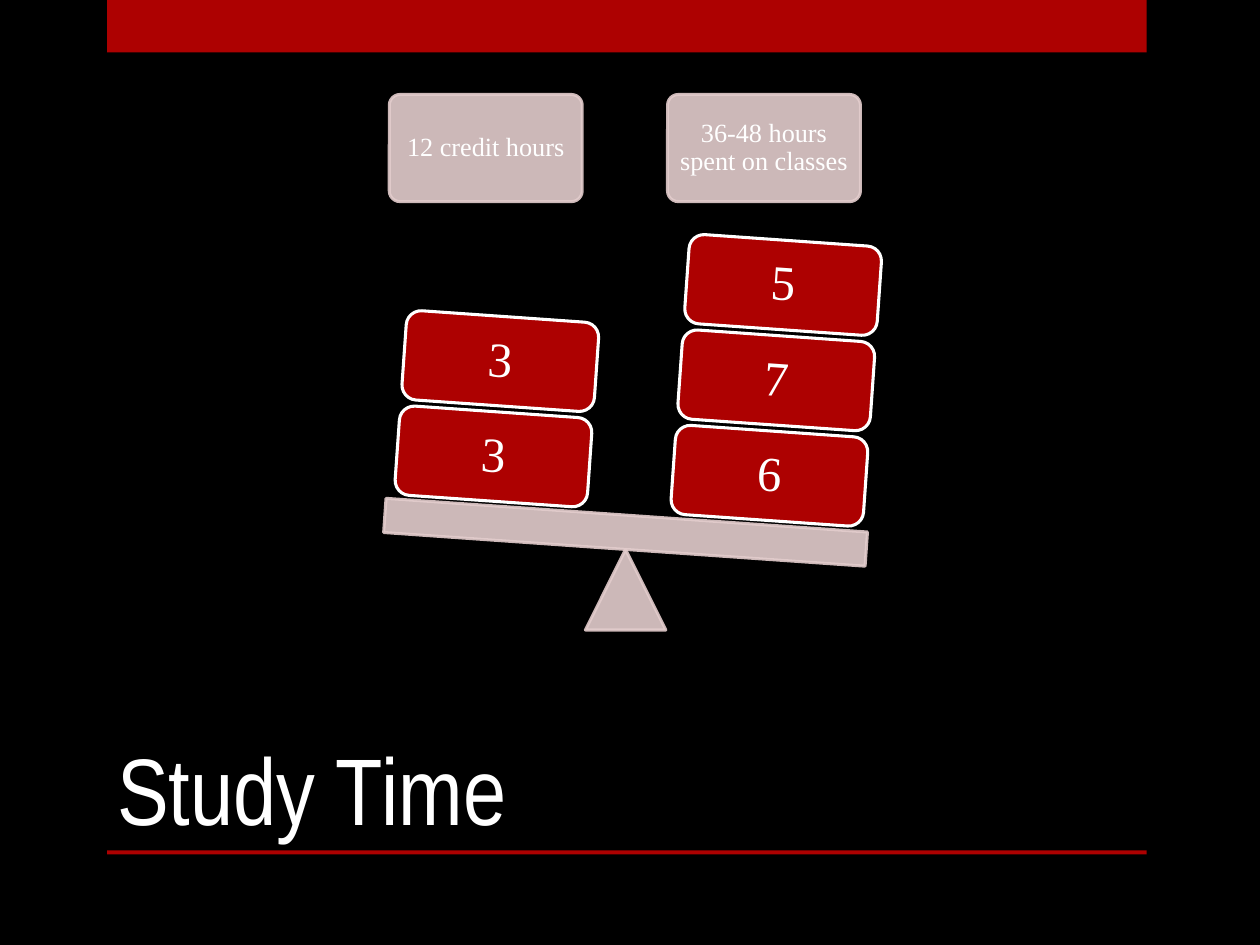
from lxml import etree
from pptx import Presentation
from pptx.dml.color import RGBColor
from pptx.enum.shapes import MSO_SHAPE
from pptx.enum.text import MSO_ANCHOR, PP_ALIGN
from pptx.oxml.ns import qn
from pptx.util import Pt

BLACK = RGBColor(0x00, 0x00, 0x00)
RED = RGBColor(0xAD, 0x01, 0x01)
PINK = RGBColor(0xE3, 0xCC, 0xCC)
WHITE = RGBColor(0xFF, 0xFF, 0xFF)
RECT = MSO_SHAPE.RECTANGLE
ROUNDED = MSO_SHAPE.ROUNDED_RECTANGLE
TRIANGLE = MSO_SHAPE.ISOSCELES_TRIANGLE
MIDDLE, BOTTOM = MSO_ANCHOR.MIDDLE, MSO_ANCHOR.BOTTOM
CENTER, LEFT = PP_ALIGN.CENTER, PP_ALIGN.LEFT
TILT = 4
HEADINGS = ["12 credit hours", "36-48 hours spent on classes"]
STACKS = [["3", "3"], ["6", "7", "5"]]


def set_attrs(obj, values):
    for name, value in values.items():
        setattr(obj, name, value)


def add_shape(s, kind, x, y, w, h, fill, line=None, alpha=None, rotation=0):
    sp = s.shapes.add_shape(kind, Pt(x), Pt(y), Pt(w), Pt(h))
    sp.shadow.inherit = False
    sp.rotation = rotation
    sp.fill.solid()
    sp.fill.fore_color.rgb = fill
    if line is None:
        sp.line.fill.background()
    else:
        sp.line.color.rgb = line
        sp.line.width = Pt(1.75)
    if alpha:
        for color in sp._element.spPr.iter(qn("a:srgbClr")):
            etree.SubElement(color, qn("a:alpha")).set("val", str(alpha * 1000))
    return sp


def write(sp, text, font, size, inset, anchor=MIDDLE, align=CENTER, spacing=0.9):
    tf = sp.text_frame
    margins = {f"margin_{side}": Pt(inset[i % 2])
               for i, side in enumerate(["left", "top", "right", "bottom"])}
    set_attrs(tf, {"word_wrap": True, "vertical_anchor": anchor, **margins})
    p = tf.paragraphs[0]
    set_attrs(p, {"alignment": align, "line_spacing": spacing})
    r = p.add_run()
    r.text = text
    set_attrs(r.font, {"name": font, "size": Pt(size)})
    r.font.color.rgb = WHITE


def add_frame(s, x, y, w, h):
    add_shape(s, RECT, x, y, w, 30, RED)
    add_shape(s, RECT, x, y + h - 2.2, w, 2.2, RED)


def add_title(s, x, y, w, h):
    box = s.shapes.add_textbox(Pt(x), Pt(y), Pt(w), Pt(h))
    write(box, "Study Time", "Arial Narrow", 54, (7.2, 3.6), BOTTOM, LEFT, 1.0)


def add_heading(s, text, x, y, w, h):
    sp = add_shape(s, ROUNDED, x, y, w, h, PINK, PINK, 90)
    sp.adjustments[0] = 0.1
    write(sp, text, "Times New Roman", 15, (4.3, 4.3))


def add_stack(s, numbers, x, y, w, h):
    for i, number in enumerate(numbers):
        sp = add_shape(s, ROUNDED, x + 3.9 * i, y - 54.5 * i, w, h,
                       RED, WHITE, rotation=TILT)
        write(sp, number, "Times New Roman", 28, (8.6, 8.6))


def add_balance(s, x, y, w, h):
    item_w, pivot = 110.2, 46
    for i, heading in enumerate(HEADINGS):
        add_heading(s, heading, x + 2.9 + 159 * i, y, item_w, 61.2)
    add_shape(s, TRIANGLE, x + (w - pivot) / 2, y + h - pivot, pivot, pivot,
              PINK, PINK, 90)
    add_shape(s, RECT, x, y + 240.4, w, 19.6, PINK, PINK, 90, TILT)
    for i, numbers in enumerate(STACKS):
        add_stack(s, numbers, x + 7.3 + 157.7 * i, y + 181.3 + 11 * i, item_w, 51.1)


def main():
    prs = Presentation()
    prs.slide_width, prs.slide_height = Pt(720), Pt(540)
    s = prs.slides.add_slide(prs.slide_layouts[6])
    s.background.fill.solid()
    s.background.fill.fore_color.rgb = BLACK
    add_frame(s, 61.2, 0, 594, 488.2)
    add_title(s, 60, 360, 534, 126)
    add_balance(s, 219.6, 54, 275.8, 306)
    prs.save("out.pptx")


if __name__ == "__main__":
    main()
